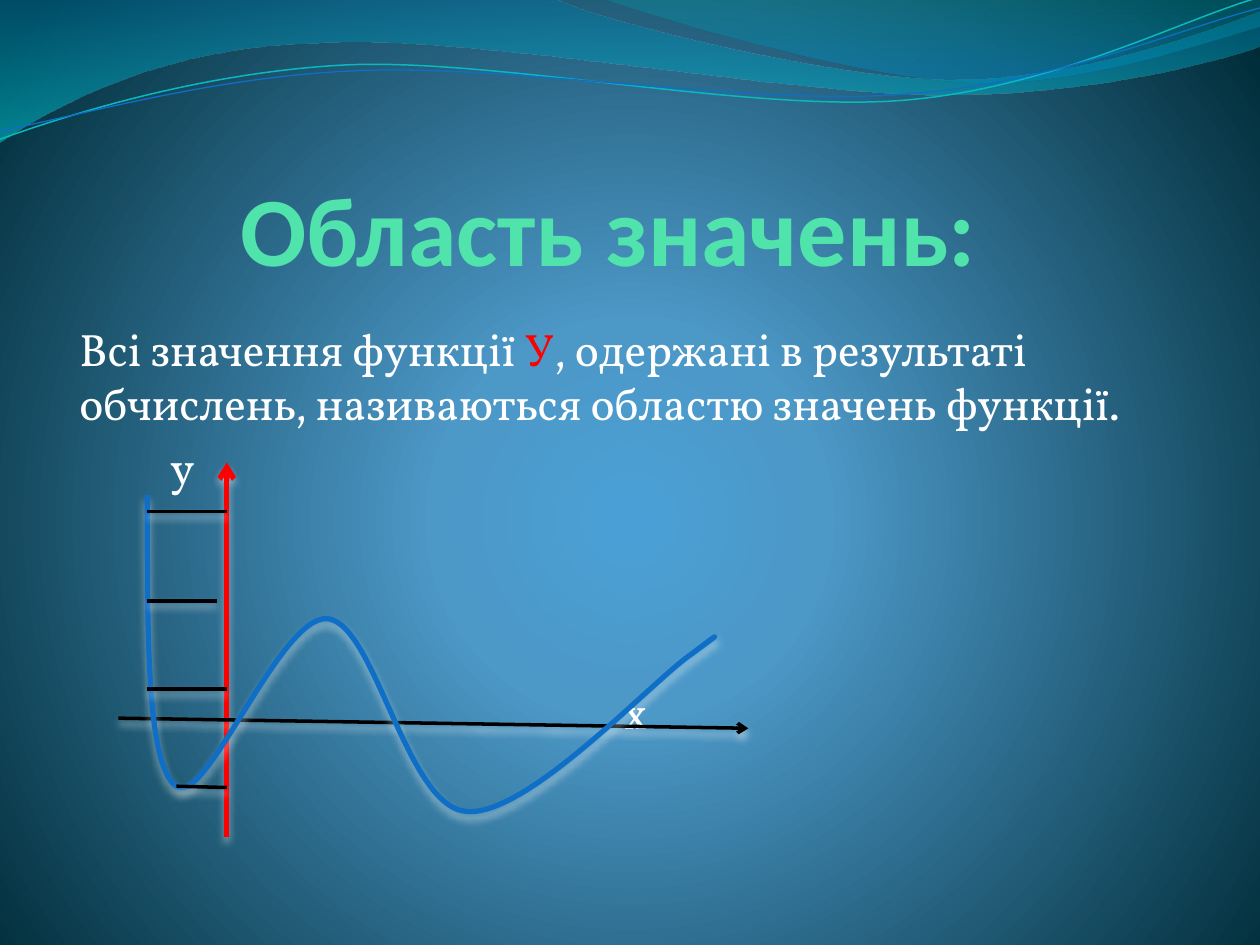
from dataclasses import dataclass

from lxml import etree
from pptx import Presentation
from pptx.dml.color import RGBColor
from pptx.enum.shapes import MSO_CONNECTOR
from pptx.enum.text import MSO_ANCHOR, PP_ALIGN
from pptx.oxml import parse_xml
from pptx.oxml.ns import nsdecls, qn
from pptx.util import Inches, Pt

STRAIGHT = MSO_CONNECTOR.STRAIGHT
BOTTOM, CENTER = MSO_ANCHOR.BOTTOM, PP_ALIGN.CENTER
TITLE_ONLY = 5
LINEAR = '<a:lin ang="5400000" scaled="0"/>'
RADIAL = ('<a:path path="circle"><a:fillToRect l="10000" t="110000" '
          'r="10000" b="100000"/></a:path>')


@dataclass(frozen=True)
class Theme:
    """Colours, fonts and sizes of the slide."""
    back: tuple = ((0, "4AA0D6", 100), (25, "4C98C7", 100), (100, "002C38", 100))
    wide: tuple = ((0, "0074A1", 45), (100, "00C6CF", 55))
    small: tuple = ((0, "00A1A9", 30), (80, "008BBF", 45))
    teal: str = "0AB8BF"
    blue: str = "0F6FC6"
    mint: str = "50E3AC"
    red: str = "FF0000"
    black: str = "000000"
    white: str = "FFFFFF"
    head: str = "Calibri"
    text: str = "Vollkorn"
    big: float = 56
    body: float = 25.9
    gap: float = 5.2
    drop: float = 109


T = Theme()


def shade(owner, stops, course):
    """Give the owner's gradient fill these stops and this course."""
    marks = "".join(
        f'<a:gs pos="{pos * 1000}"><a:srgbClr val="{tone}">'
        f'<a:alpha val="{alpha * 1000}"/></a:srgbClr></a:gs>'
        for pos, tone, alpha in stops)
    old = owner.element.xpath(".//a:gradFill")[0]
    new = parse_xml(f'<a:gradFill {nsdecls("a")} rotWithShape="1">'
                    f"<a:gsLst>{marks}</a:gsLst>{course}</a:gradFill>")
    old.getparent().replace(old, new)


def trace(slide, start, steps, close=False, base=(0, 0)):
    """Build an outline: a step of two numbers is a line, of six a curve."""
    def spots(step):
        return [(Inches(base[0] + x), Inches(base[1] + y))
                for x, y in zip(step[::2], step[1::2])]

    form = slide.shapes.build_freeform(*spots(start)[0])
    for step in steps:
        form.add_line_segments(spots(step), close=False)
    if close:
        form.add_line_segments([], close=True)
    shape = form.convert_to_shape()
    lines = iter(shape.element.xpath(".//a:lnTo"))
    for step in steps:
        first = next(lines)
        if len(step) == 6:
            first.tag = qn("a:cubicBezTo")
            for other in (next(lines), next(lines)):
                first.append(other[0])
                other.getparent().remove(other)
    shape.shadow.inherit = False
    return shape


def ink(shape, tone, width):
    """Set the line colour and width of a shape."""
    shape.line.color.rgb = RGBColor.from_string(tone)
    shape.line.width = Pt(width)


def band(slide, start, steps, stops):
    """Draw a closed wave with a gradient fill."""
    shape = trace(slide, start, steps, True)
    shape.fill.gradient()
    shade(shape, stops, LINEAR)
    shape.line.fill.background()


def curve(slide, start, steps, tone, width, base=(0, 0)):
    """Draw an open curve."""
    shape = trace(slide, start, steps, base=base)
    shape.fill.background()
    ink(shape, tone, width)
    return shape


def glow(shape):
    """Put a soft light shadow below a line."""
    props = shape.element.spPr
    for old in props.findall(qn("a:effectLst")):
        props.remove(old)
    props.append(parse_xml(
        f'<a:effectLst {nsdecls("a")}><a:outerShdw blurRad="57150" dist="38100" '
        f'dir="5400000" rotWithShape="0"><a:srgbClr val="{T.white}">'
        '<a:alpha val="48000"/></a:srgbClr></a:outerShdw></a:effectLst>'))


def rule(slide, box, start, end, tone, width, arrow=False):
    """Draw a straight line between two points of the box."""
    left, top = box
    line = slide.shapes.add_connector(
        STRAIGHT, Inches(left + start[0]), Inches(top + start[1]),
        Inches(left + end[0]), Inches(top + end[1]))
    ink(line, tone, width)
    if arrow:
        etree.SubElement(line.line._get_or_add_ln(), qn("a:tailEnd"), type="arrow")
    glow(line)


def style(run, tone, size, face):
    """Set the font of a run."""
    run.font.name, run.font.size = face, Pt(size)
    run.font.color.rgb = RGBColor.from_string(tone)


def waves(slide):
    """Draw the waves along the top edge."""
    band(slide, (0, 0), [(4.4, -0.01),
                         (4.76, 0.17, 6.64, 0.63, 7.58, 0.63),
                         (8.53, 0.63, 9.58, 0.26, 10, 0.09),
                         (10.01, 0.36),
                         (9.83, 0.44, 8.7, 0.76, 7.46, 0.75),
                         (6.22, 0.75, 3.82, 0.28, 2.57, 0.34),
                         (1.29, 0.36, 0.46, 0.83, -0.01, 1.13)], T.wide)
    band(slide, (4.79, -0.01), [(5.09, 0.11, 6.82, 0.62, 7.69, 0.65),
                                (8.56, 0.69, 9.61, 0.32, 10, 0.21),
                                (10, 0)], T.small)
    teal = curve(slide, (-0.02, 0.87), [(0.47, 0.72, 1.58, 0.41, 2.78, 0.41),
                                        (3.96, 0.42, 5.91, 0.93, 7.12, 0.9),
                                        (8.32, 0.87, 9.4, 0.36, 10, 0.22)],
                 T.teal, 0.85)
    blue = curve(slide, (-0.02, 0.8), [(0.46, 0.75, 1.64, 0.45, 2.83, 0.46),
                                       (4.04, 0.46, 5.96, 0.89, 7.16, 0.85),
                                       (8.35, 0.83, 9.42, 0.42, 10.02, 0.3)],
                 T.blue, 0.75)
    teal.rotation = blue.rotation = 357.3


def heading(slide, box):
    """Fill and format the title."""
    title = slide.shapes.title
    title.left, title.top, title.width, title.height = map(Inches, box)
    frame = title.text_frame
    frame.text = "Область значень:"
    frame.vertical_anchor = BOTTOM
    frame.margin_left = frame.margin_right = 0
    frame.margin_top = frame.margin_bottom = 0
    para = frame.paragraphs[0]
    para.alignment = CENTER
    style(para.runs[0], T.mint, T.big, T.head)
    para.runs[0].font.bold = True


def body(slide, box):
    """Write the definition and the two axis names below it."""
    frame = slide.shapes.add_textbox(*map(Inches, box)).text_frame
    frame.word_wrap = True
    frame.margin_left = frame.margin_right = Inches(0.05)
    frame.margin_top = frame.margin_bottom = Inches(0.05)
    rows = (
        (0, T.gap, (("Всі значення функції ", T.white), ("У", T.red),
                    (", одержані в результаті обчислень, називаються "
                     "областю значень функції.", T.white))),
        (0.72, T.gap, (("у", T.white),)),
        (4.32, T.drop, (("х", T.white),)))
    for row, (indent, space, parts) in enumerate(rows):
        para = frame.add_paragraph() if row else frame.paragraphs[0]
        para.space_before = Pt(space)
        para._p.get_or_add_pPr().set("marL", str(Inches(indent)))
        for words, tone in parts:
            run = para.add_run()
            run.text = words
            style(run, tone, T.body, T.text)


def graph(slide, box):
    """Draw the axes, the function and its value marks."""
    rule(slide, box, (0.86, 2.97), (0.86, 0), T.red, 3, True)
    rule(slide, box, (0, 2.03), (5, 2.11), T.black, 2, True)
    glow(curve(slide, (0.23, 0.26), [(0.23, 1.33, 0.22, 2.41, 0.46, 2.57),
                                     (0.7, 2.74, 1.28, 1.21, 1.66, 1.24),
                                     (2.04, 1.28, 2.28, 2.73, 2.76, 2.77),
                                     (3.24, 2.82, 4.24, 1.73, 4.55, 1.52),
                                     (4.85, 1.3, 4.72, 1.39, 4.59, 1.49)],
               T.blue, 3, box))
    for start, end, y, fall in ((0.23, 0.86, 0.39, 0), (0.23, 0.78, 1.1, 0),
                                (0.23, 0.86, 1.8, 0), (0.46, 0.86, 2.57, 0.01)):
        rule(slide, box, (start, y), (end, y + fall), T.black, 2)


def main():
    """Build and save the slide."""
    deck = Presentation()
    deck.slide_width, deck.slide_height = Inches(10), Inches(7.5)
    slide = deck.slides.add_slide(deck.slide_layouts[TITLE_ONLY])
    slide.background.fill.gradient()
    shade(slide, T.back, RADIAL)
    waves(slide)
    heading(slide, (0.58, 1.44, 8.5, 0.83))
    body(slide, (0.58, 2.5, 8.5, 4.61))
    graph(slide, (0.94, 3.67))
    deck.save("out.pptx")


if __name__ == "__main__":
    main()
